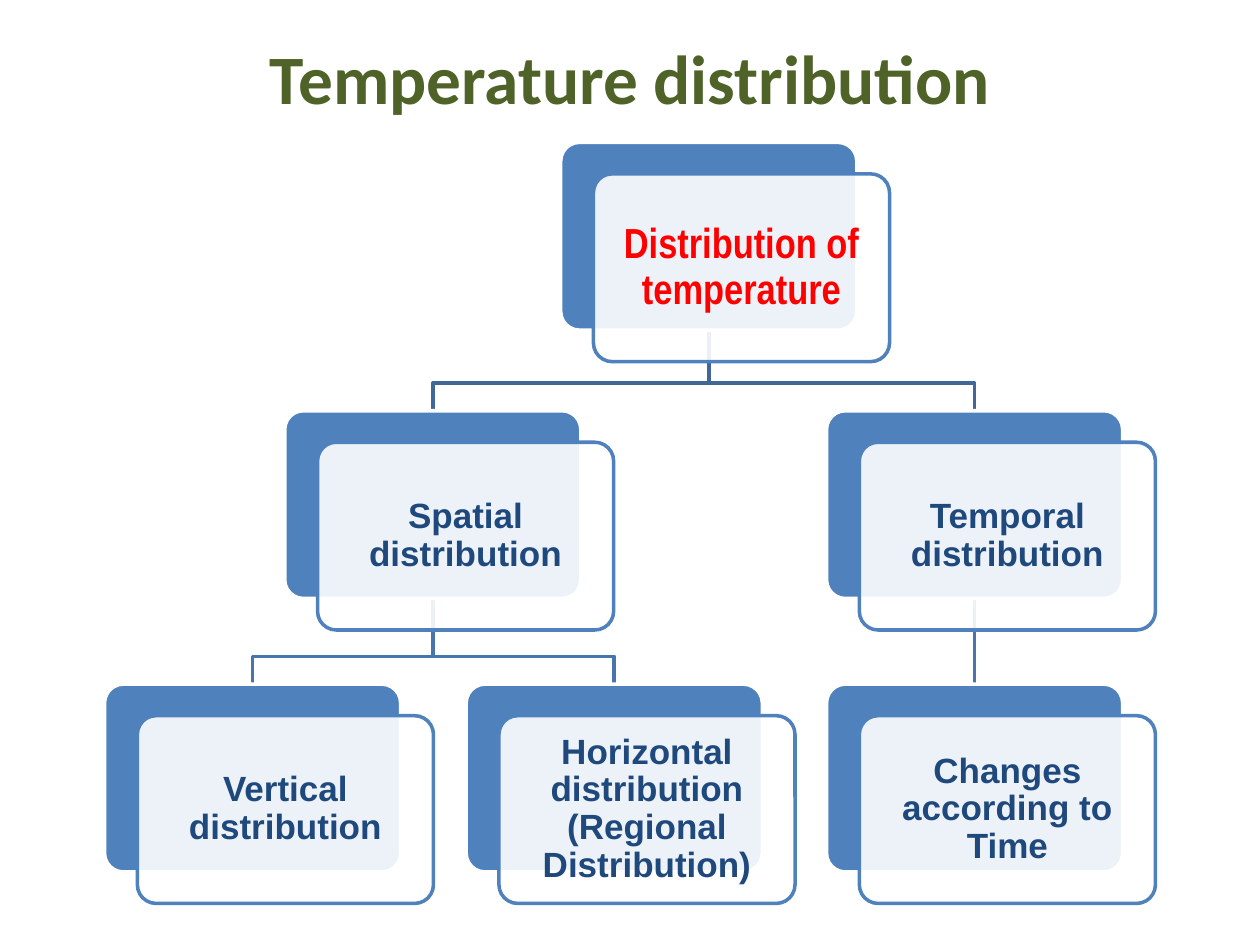
"""Build a slide with a tree of temperature distribution types."""
from lxml import etree
from pptx import Presentation
from pptx.dml.color import RGBColor
from pptx.enum.shapes import MSO_CONNECTOR, MSO_SHAPE
from pptx.enum.text import MSO_ANCHOR, MSO_AUTO_SIZE, PP_ALIGN
from pptx.oxml.ns import qn
from pptx.util import Inches, Pt

ROUND = MSO_SHAPE.ROUNDED_RECTANGLE
LINE = MSO_CONNECTOR.STRAIGHT
MID = MSO_ANCHOR.MIDDLE
FIXED = MSO_AUTO_SIZE.NONE
MARGINS = ("margin_left", "margin_top", "margin_right", "margin_bottom")

TITLE = "Temperature distribution"
COLORS = {"title": "4F6228", "card": "4F81BD", "face": "FFFFFF", "root": "FF0000",
          "text": "1F497D", "high": "3F6797", "low": "4875AC"}
NODES = {
    "root": ("Distribution of temperature", 4.45, 0),
    "space": ("Spatial distribution", 2.26, 1),
    "vert": ("Vertical distribution", 0.83, 2),
    "horiz": ("Horizontal distribution (Regional Distribution)", 3.7, 2),
    "time": ("Temporal distribution", 6.56, 1),
    "change": ("Changes according to Time", 6.56, 2),
}
LINKS = [("time", "change"), ("root", "time"), ("space", "horiz"),
         ("space", "vert"), ("root", "space")]
TOPS = (1.13, 3.26, 5.43)
WIDE, HIGH = 2.35, 1.49
SHIFT_X, SHIFT_Y = 0.26, 0.25
BEND = 0.22
FONTS = {
    "title": {"name": "Calibri", "size": Pt(39.6), "bold": True},
    "root": {"name": "Arial Narrow", "size": Pt(24), "bold": True},
    "text": {"name": "Arial", "size": Pt(20), "bold": True},
}


def paint(form, key):
    form.solid()
    form.fore_color.rgb = RGBColor.from_string(COLORS[key])


def stroke(shape, key):
    paint(shape.line.fill, key)
    shape.line.width = Pt(2)


def write(shape, text, key):
    frame = shape.text_frame
    for name, value in {"word_wrap": True, "vertical_anchor": MID, "auto_size": FIXED}.items():
        setattr(frame, name, value)
    para = frame.paragraphs[0]
    para.alignment = PP_ALIGN.CENTER
    run = para.add_run()
    run.text = text
    for name, value in FONTS[key].items():
        setattr(run.font, name, value)
    run.font.color.rgb = RGBColor.from_string(COLORS[key])
    return frame


def add_card(shapes, left, top, fill, line):
    card = shapes.add_shape(ROUND, Inches(left), Inches(top), Inches(WIDE), Inches(HIGH))
    card.adjustments[0] = 0.1
    card.shadow.inherit = False
    paint(card.fill, fill)
    stroke(card, line)
    return card


def add_node(shapes, key):
    text, left, row = NODES[key]
    back = add_card(shapes, left, TOPS[row], "card", "face")
    front = add_card(shapes, left + SHIFT_X, TOPS[row] + SHIFT_Y, "face", "card")
    tint = front.fill._xPr.find(qn("a:solidFill"))[0]
    etree.SubElement(tint, qn("a:alpha"), val="90000")
    style = "root" if key == "root" else "text"
    frame = write(front, text, style)
    frame.paragraphs[0].line_spacing = 0.9
    for side in MARGINS:
        setattr(frame, side, Inches(0.1 if key == "root" else 0.08))
    return back


def add_link(shapes, start, end):
    (_, left, row), (_, goal, low) = NODES[start], NODES[end]
    x, y = Inches(left + WIDE / 2), Inches(TOPS[row] + HIGH)
    to_x, to_y = Inches(goal + WIDE / 2), Inches(TOPS[low])
    if x == to_x:
        link = shapes.add_connector(LINE, x, y, to_x, to_y)
        etree.SubElement(link._element.spPr, qn("a:effectLst"))
    else:
        turn = to_y - Inches(BEND)
        path = shapes.build_freeform(x, y)
        path.add_line_segments([(x, turn), (to_x, turn), (to_x, to_y)], close=False)
        link = path.convert_to_shape()
        link.shadow.inherit = False
        link.fill.background()
    stroke(link, "high" if start == "root" else "low")
    return link


def main():
    deck = Presentation()
    deck.slide_width, deck.slide_height = Inches(10), Inches(7.5)
    shapes = deck.slides.add_slide(deck.slide_layouts[5]).shapes
    title = shapes.title
    box = {"left": 0.5, "top": 0.3, "width": 9, "height": 0.62}
    for name, value in box.items():
        setattr(title, name, Inches(value))
    write(title, TITLE, "title")
    links = {pair: add_link(shapes, *pair) for pair in LINKS}
    cards = {key: add_node(shapes, key) for key in NODES}
    drop = links["time", "change"]
    drop.begin_connect(cards["time"], 2)
    drop.end_connect(cards["change"], 0)
    deck.save("out.pptx")


if __name__ == "__main__":
    main()
